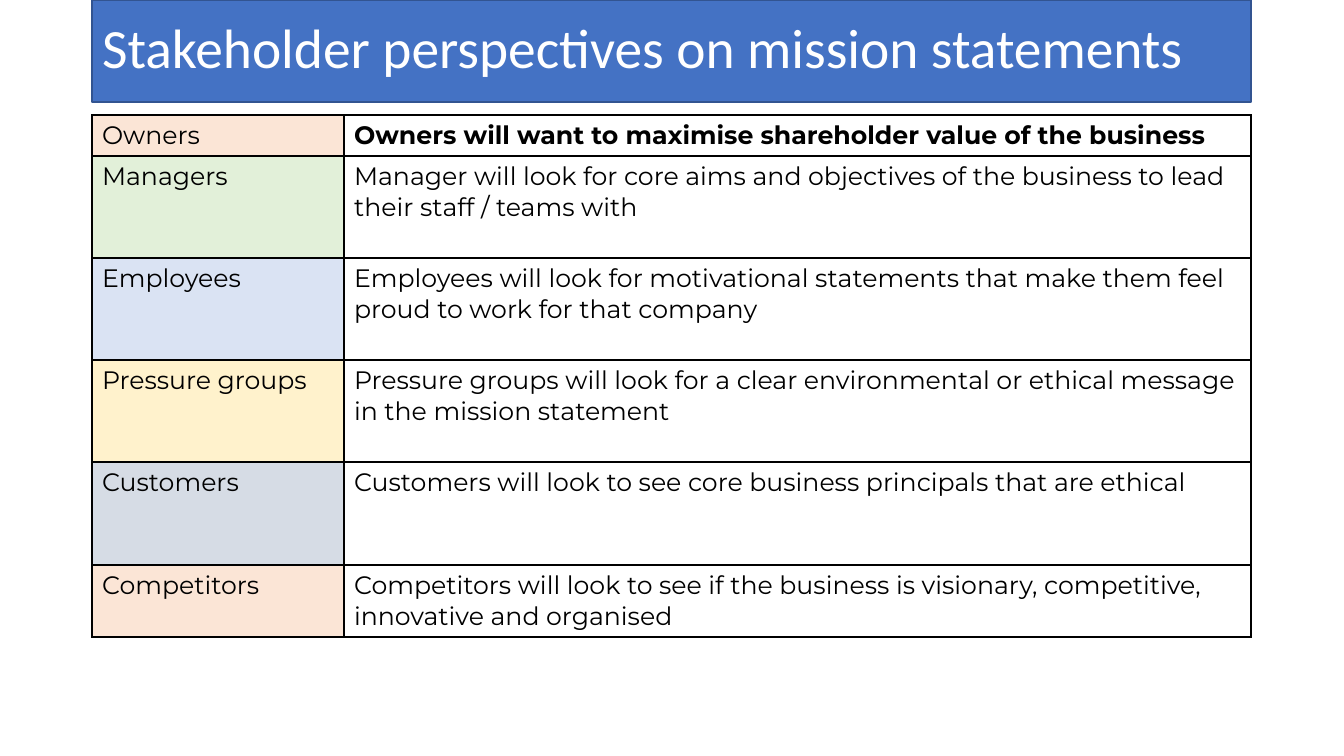
from dataclasses import dataclass

from lxml import etree
from pptx import Presentation
from pptx import util as u
from pptx.dml.color import RGBColor
from pptx.enum import text
from pptx.oxml import ns

DPI = 100.8


def px(n):
    return u.Emu(round(n * u.Inches(1) / DPI))


@dataclass(frozen=True)
class Theme:
    head: str = "Calibri"
    body: str = "Montserrat"
    big: float = 39.6
    small: float = 18
    blue: str = "4472C4"
    edge: str = "325491"
    white: str = "FFFFFF"
    black: str = "000000"
    peach: str = "FBE5D6"
    green: str = "E2F0D9"
    sky: str = "DAE3F3"
    cream: str = "FFF2CC"
    grey: str = "D6DCE5"


T = Theme()

# Stakeholder, view, label colour, row height in px
ROWS = [
    ("Owners", "Owners will want to maximise shareholder value of the business",
     T.peach, 41),
    ("Managers", "Manager will look for core aims and objectives of the business "
     "to lead their staff / teams with", T.green, 102),
    ("Employees", "Employees will look for motivational statements that make them "
     "feel proud to work for that company", T.sky, 102),
    ("Pressure groups", "Pressure groups will look for a clear environmental or "
     "ethical message in the mission statement", T.cream, 102),
    ("Customers", "Customers will look to see core business principals that are "
     "ethical", T.grey, 103),
    ("Competitors", "Competitors will look to see if the business is visionary, "
     "competitive, innovative and organised", T.peach, 72),
]


def paint(fill, color):
    fill.solid()
    fill.fore_color.rgb = RGBColor.from_string(color)


def style(font, name, size, color, bold=False):
    font.name, font.size, font.bold = name, u.Pt(size), bold
    font.color.rgb = RGBColor.from_string(color)


def border(cell):
    props = cell._tc.get_or_add_tcPr()
    for side in ("lnL", "lnR", "lnT", "lnB"):
        line = etree.SubElement(props, ns.qn(f"a:{side}"), w=str(u.Pt(1)))
        fill = etree.SubElement(line, ns.qn("a:solidFill"))
        etree.SubElement(fill, ns.qn("a:srgbClr"), val=T.black)


# Title banner
def banner(slide, words, x, y, w, h):
    box = slide.shapes.title
    box.left, box.top, box.width, box.height = map(px, (x, y, w, h))
    paint(box.fill, T.blue)
    paint(box.line.fill, T.edge)
    box.line.width = u.Pt(1)
    frame = box.text_frame
    frame.text = words
    frame.word_wrap = True
    frame.auto_size = text.MSO_AUTO_SIZE.NONE
    frame.vertical_anchor = text.MSO_ANCHOR.MIDDLE
    para = frame.paragraphs[0]
    para.alignment = text.PP_ALIGN.LEFT
    para.line_spacing = 0.9
    style(para.font, T.head, T.big, T.white)


# Stakeholder table: labels on the left, views on the right
def views(slide, rows, x, y, w, label):
    high = sum(row[-1] for row in rows)
    frame = slide.shapes.add_table(len(rows), 2, *map(px, (x, y, w, high)))
    table = frame.table
    table.first_row = table.horz_banding = False
    table.columns[0].width = px(label)
    table.columns[1].width = px(w - label)
    for i, (name, view, color, tall) in enumerate(rows):
        table.rows[i].height = px(tall)
        for j, (words, back) in enumerate(((name, color), (view, T.white))):
            cell = table.cell(i, j)
            cell.text = words
            border(cell)
            paint(cell.fill, back)
            style(cell.text_frame.paragraphs[0].font, T.body, T.small, T.black,
                  bold=(i == 0 and j == 1))


def main():
    deck = Presentation()
    deck.slide_width, deck.slide_height = px(1344), px(756)
    slide = deck.slides.add_slide(deck.slide_layouts.get_by_name("Title Only"))
    left, wide = 92, 1159
    banner(slide, "Stakeholder perspectives on mission statements",
           left, 0, wide, 102)
    views(slide, ROWS, left, 115, wide, 252)
    deck.save("out.pptx")


if __name__ == "__main__":
    main()
